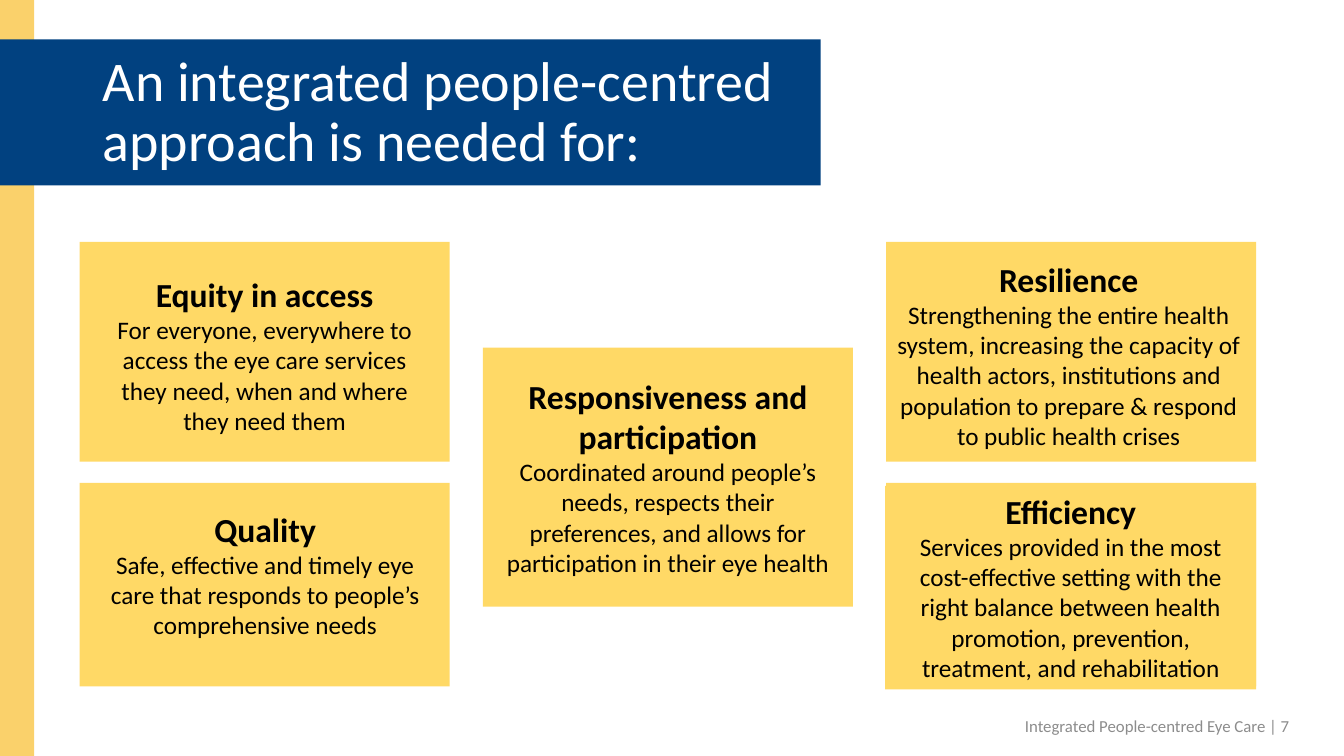
from dataclasses import dataclass

from pptx import Presentation
from pptx.dml.color import RGBColor
from pptx.enum.shapes import MSO_SHAPE
from pptx.enum.text import MSO_ANCHOR, PP_ALIGN
from pptx.slide import Slide
from pptx.util import Inches, Pt


@dataclass(frozen=True)
class Theme:
    font: str = "Calibri"
    stripe: str = "FAD16B"
    banner: str = "014180"
    card: str = "FFD966"
    white: str = "FFFFFF"
    black: str = "000000"
    grey: str = "8C8C8C"
    title_size: int = 40
    heading_size: int = 24
    body_size: int = 18
    footer_size: int = 12


@dataclass(frozen=True)
class Box:
    left: float
    top: float
    width: float
    height: float

    def lengths(self) -> list[Inches]:
        return [Inches(value) for value in (self.left, self.top, self.width, self.height)]


@dataclass(frozen=True)
class Line:
    text: str
    size: int
    color: str
    bold: bool = False


@dataclass(frozen=True)
class Card:
    panel: Box
    text_area: Box
    heading: str
    body: str


THEME = Theme()
CARD_WIDTH = 3.67
LEFT, MIDDLE, RIGHT = (0.79 + column * 4.0 for column in range(3))
UPPER_TOP, UPPER_HEIGHT = 2.4, 2.18
LOWER_TOP, LOWER_HEIGHT = 4.79, 2.02

CARDS = [
    Card(Box(LEFT, UPPER_TOP, CARD_WIDTH, UPPER_HEIGHT), Box(1.03, 2.67, 3.19, 1.72),
         "Equity in access",
         "For everyone, everywhere to access the eye care services they need, "
         "when and where they need them"),
    Card(Box(LEFT, LOWER_TOP, CARD_WIDTH, LOWER_HEIGHT), Box(0.94, 5, 3.38, 1.41),
         "Quality",
         "Safe, effective and timely eye care that responds to people’s comprehensive needs"),
    Card(Box(MIDDLE, 3.45, CARD_WIDTH, 2.57), Box(4.82, 3.68, 3.61, 2.12),
         "Responsiveness and participation",
         "Coordinated around people’s needs, respects their preferences, "
         "and allows for participation in their eye health"),
    Card(Box(RIGHT, UPPER_TOP, CARD_WIDTH, UPPER_HEIGHT), Box(8.79, 2.52, 3.62, 2.02),
         "Resilience",
         "Strengthening the entire health system, increasing the capacity of health actors, "
         "institutions and population to prepare & respond to public health crises"),
    Card(Box(RIGHT, LOWER_TOP, CARD_WIDTH, LOWER_HEIGHT), Box(8.78, 4.82, 3.68, 2.02),
         "Efficiency",
         "Services provided in the most cost-effective setting with the right balance "
         "between health promotion, prevention, treatment, and rehabilitation"),
]


def add_panel(slide: Slide, box: Box, color: str) -> None:
    shape = slide.shapes.add_shape(MSO_SHAPE.RECTANGLE, *box.lengths())
    shape.shadow.inherit = False
    shape.fill.solid()
    shape.fill.fore_color.rgb = RGBColor.from_string(color)
    shape.line.fill.background()


def add_text(slide: Slide, box: Box, lines: list[Line], alignment: PP_ALIGN,
             anchor: MSO_ANCHOR = MSO_ANCHOR.TOP, spacing: float = 1.0,
             fill: str | None = None) -> None:
    shape = slide.shapes.add_textbox(*box.lengths())
    if fill:
        shape.fill.solid()
        shape.fill.fore_color.rgb = RGBColor.from_string(fill)
    frame = shape.text_frame
    frame.word_wrap = True
    frame.vertical_anchor = anchor
    for index, line in enumerate(lines):
        paragraph = frame.add_paragraph() if index else frame.paragraphs[0]
        paragraph.alignment = alignment
        paragraph.line_spacing = spacing
        run = paragraph.add_run()
        run.text = line.text
        formats = {"name": THEME.font, "size": Pt(line.size), "bold": line.bold}
        for attribute, value in formats.items():
            setattr(run.font, attribute, value)
        run.font.color.rgb = RGBColor.from_string(line.color)


def add_card(slide: Slide, card: Card) -> None:
    add_panel(slide, card.panel, THEME.card)
    lines = [Line(card.heading, THEME.heading_size, THEME.black, True),
             Line(card.body, THEME.body_size, THEME.black)]
    add_text(slide, card.text_area, lines, PP_ALIGN.CENTER, fill=THEME.card)


def main() -> None:
    presentation = Presentation()
    presentation.slide_width = Inches(13.33)
    presentation.slide_height = Inches(7.5)
    slide = presentation.slides.add_slide(presentation.slide_layouts[6])

    add_panel(slide, Box(0, 0, 0.34, 7.5), THEME.stripe)
    add_panel(slide, Box(0, 0.39, 8.14, 1.45), THEME.banner)
    title = Line("An integrated people-centred approach is needed for:",
                 THEME.title_size, THEME.white)
    add_text(slide, Box(0.92, 0.4, 6.91, 1.45), [title], PP_ALIGN.LEFT,
             MSO_ANCHOR.MIDDLE, spacing=0.9)
    for card in CARDS:
        add_card(slide, card)
    footer = Line("Integrated People-centred Eye Care | 7", THEME.footer_size, THEME.grey)
    add_text(slide, Box(9.89, 7, 3, 0.4), [footer], PP_ALIGN.RIGHT, MSO_ANCHOR.MIDDLE)

    presentation.save("out.pptx")


if __name__ == "__main__":
    main()
